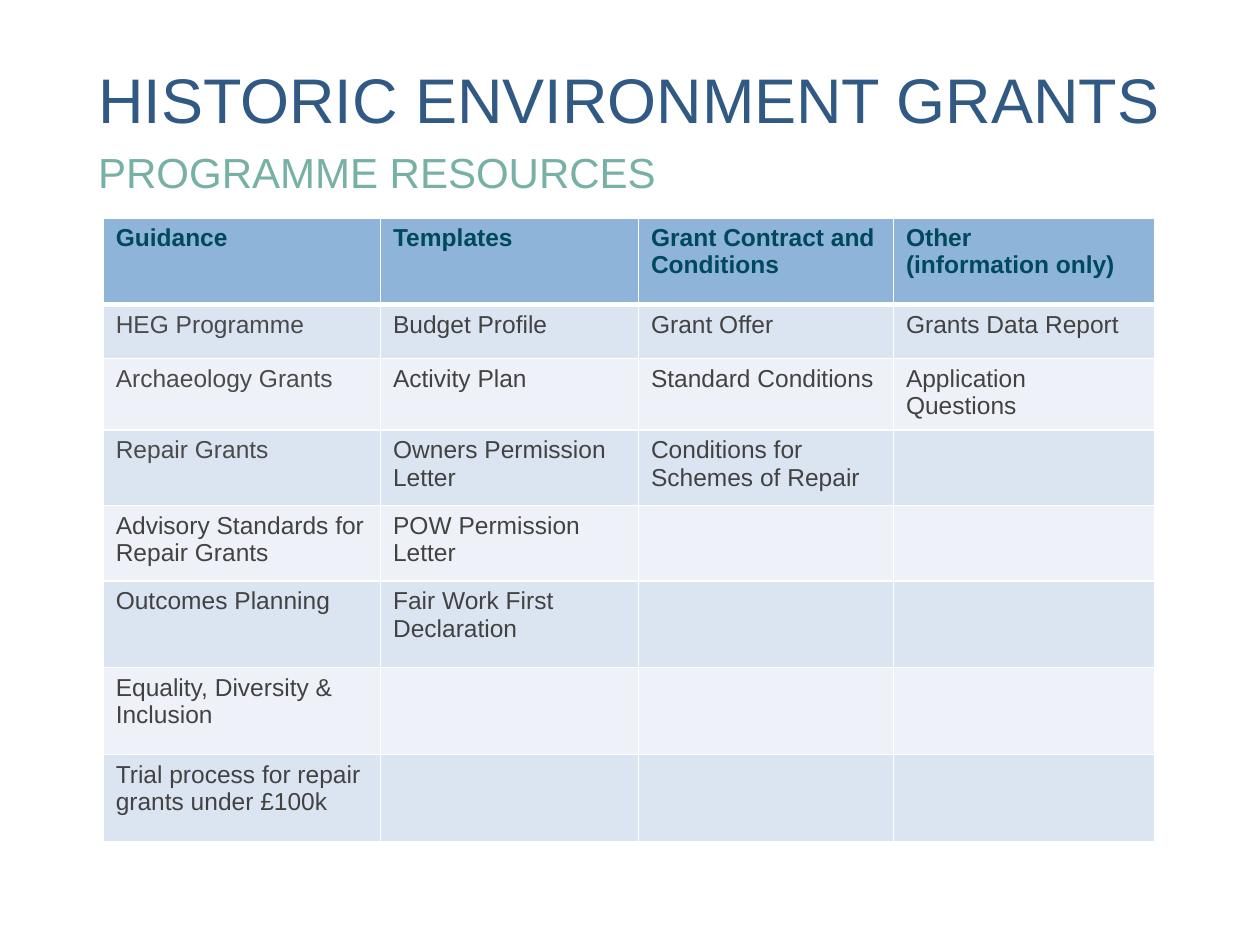
from lxml.etree import SubElement
from pptx import Presentation
from pptx.dml.color import RGBColor
from pptx.enum.text import MSO_ANCHOR
from pptx.oxml.ns import qn
from pptx.util import Cm, Pt

HEADINGS = ["Guidance", "Templates", "Grant Contract and Conditions", "Other\n(information only)"]
RESOURCES = [
    ["HEG Programme", "Budget Profile", "Grant Offer", "Grants Data Report"],
    ["Archaeology Grants", "Activity Plan", "Standard Conditions", "Application Questions"],
    ["Repair Grants", "Owners Permission Letter", "Conditions for Schemes of Repair", ""],
    ["Advisory Standards for Repair Grants", "POW Permission Letter", "", ""],
    ["Outcomes Planning", "Fair Work First Declaration", "", ""],
    ["Equality, Diversity & Inclusion", "", "", ""],
    ["Trial process for repair grants under £100k", "", "", ""],
]
COLUMN_WIDTHS = [5.59, 5.2, 5.14, 5.27]
ROW_HEIGHTS = [1.75, 1.09, 0.94, 1.52, 1.52, 1.75, 1.75, 1.75]


def colour(value):
    return RGBColor.from_string(value)


def set_values(target, values):
    for name, value in values.items():
        setattr(target, name, value)


class SlideBuilder:
    """Holds the style and the current slide, and adds its elements."""

    font_name = "Arial"
    heading_fill = "8FB4D9"
    band_fills = ["DBE5F1", "EEF2F8"]
    heading_colour = "00485B"
    body_colour = "424242"
    programme_colour = "4A4A4A"
    border_colour = "FFFFFF"

    def __init__(self, slide):
        self.slide = slide

    def add_text(self, text_frame, text, size, text_colour, bold=False):
        text_frame.text = text
        for paragraph in text_frame.paragraphs:
            for run in paragraph.runs:
                set_values(run.font, {"name": self.font_name, "size": Pt(size), "bold": bold})
                run.font.color.rgb = colour(text_colour)

    def heading(self, text, top, height, size, text_colour, space_after=0):
        shape = self.slide.shapes.add_textbox(Cm(1.98), Cm(top), Cm(22.2), Cm(height))
        frame = shape.text_frame
        sides = ("left", "top", "right", "bottom")
        set_values(frame, {f"margin_{side}": Cm(0) for side in sides})
        set_values(frame, {"word_wrap": True, "vertical_anchor": MSO_ANCHOR.TOP})
        self.add_text(frame, text, size, text_colour)
        set_values(frame.paragraphs[0], {"line_spacing": 0.9, "space_after": Pt(space_after)})

    def borders(self, cell, widths):
        properties = cell._tc.get_or_add_tcPr()
        for side, width in widths.items():
            line = SubElement(properties, qn(f"a:ln{side}"), w=str(Pt(width)))
            fill = SubElement(line, qn("a:solidFill"))
            SubElement(fill, qn("a:srgbClr"), val=self.border_colour)

    def cell(self, cell, text, row, column):
        is_heading = row == 0
        if is_heading:
            fill, text_colour = self.heading_fill, self.heading_colour
        else:
            fill = self.band_fills[(row - 1) % 2]
            is_programme = column == 0 and row <= 3
            text_colour = self.programme_colour if is_programme else self.body_colour
        self.borders(cell, {"L": 1, "R": 1, "T": 3 if row == 1 else 1, "B": 3 if is_heading else 1})
        cell.fill.solid()
        cell.fill.fore_color.rgb = colour(fill)
        if text:
            self.add_text(cell.text_frame, text, 14, text_colour, is_heading)

    def table(self, rows, left, top, widths, heights):
        shape = self.slide.shapes.add_table(
            len(rows), len(widths), Cm(left), Cm(top), Cm(sum(widths)), Cm(sum(heights)))
        table = shape.table
        for column, width in zip(table.columns, widths):
            column.width = Cm(width)
        for row, height in zip(table.rows, heights):
            row.height = Cm(height)
        for row, texts in enumerate(rows):
            for column, text in enumerate(texts):
                self.cell(table.cell(row, column), text, row, column)


def main():
    presentation = Presentation()
    set_values(presentation, {"slide_width": Cm(25.4), "slide_height": Cm(19.05)})
    builder = SlideBuilder(presentation.slides.add_slide(presentation.slide_layouts[6]))
    builder.heading("HISTORIC ENVIRONMENT GRANTS", 1.4, 1.68, 36, "305983")
    builder.heading("PROGRAMME RESOURCES", 3.07, 1.09, 24, "77B0A4", space_after=6)
    builder.table([HEADINGS] + RESOURCES, 2.08, 4.39, COLUMN_WIDTHS, ROW_HEIGHTS)
    presentation.save("out.pptx")


if __name__ == "__main__":
    main()
